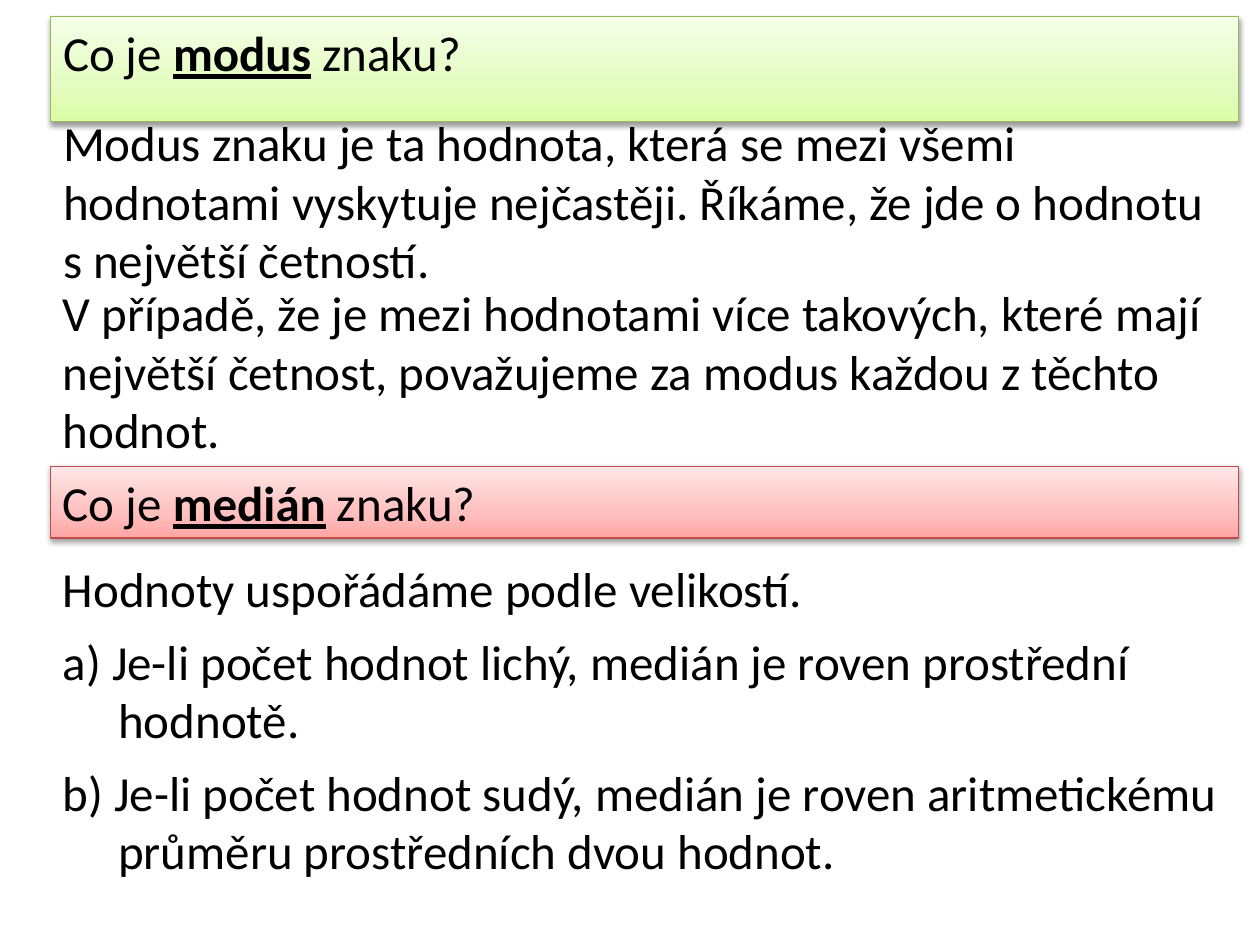
from pptx import Presentation
from pptx.dml.color import RGBColor
from pptx.enum.shapes import MSO_SHAPE
from pptx.enum.text import MSO_ANCHOR, MSO_AUTO_SIZE, PP_ALIGN
from pptx.oxml import parse_xml
from pptx.oxml.ns import nsdecls, qn
from pptx.util import Inches, Pt

COLORS = {
    "text": "000000",
    "green_line": "98B955",
    "green": ["DAFDA7", "E4FCC2", "F5FFE7"],
    "red_line": "BF4C48",
    "red": ["FFA6A5", "FFC0BF", "FFE7E7"],
    "shadow": "000000",
}
GRADIENT_POSITIONS = [0, 35, 100]


class SlideBuilder:
    font, size = "Calibri", Pt(28)
    left, width = Inches(0.4), Inches(9.43)
    hanging = Inches(0.44)

    def __init__(self, slide):
        self.slide = slide

    def place(self, shape, top, height):
        shape.left, shape.top = self.left, Inches(top)
        shape.width, shape.height = self.width, Inches(height)

    def fill_text(self, shape, lines, hanging=0):
        """Each line is a list of (text, emphasised) runs."""
        frame = shape.text_frame
        frame.word_wrap = True
        frame.auto_size = MSO_AUTO_SIZE.SHAPE_TO_FIT_TEXT
        frame.vertical_anchor = MSO_ANCHOR.TOP
        frame.margin_left = frame.margin_right = Inches(0.1)
        frame.margin_top = frame.margin_bottom = Inches(0.05)
        for index, runs in enumerate(lines):
            paragraph = frame.add_paragraph() if index else frame.paragraphs[0]
            properties = paragraph._p.get_or_add_pPr()
            properties.set("marL", str(hanging if index else 0))
            properties.set("indent", "0")
            properties.append(parse_xml(f"<a:buNone {nsdecls('a')}/>"))
            paragraph.alignment = PP_ALIGN.LEFT
            paragraph.space_before = Pt(0)
            for text, emphasised in runs:
                run = paragraph.add_run()
                run.text = text
                run.font.name, run.font.size = self.font, self.size
                run.font.color.rgb = RGBColor.from_string(COLORS["text"])
                run.font.bold = run.font.underline = emphasised

    def banner(self, top, term, color, shape=None):
        if shape is None:
            shape = self.slide.shapes.add_shape(
                MSO_SHAPE.RECTANGLE, self.left, 0, self.width, 0)
        self.place(shape, top, 0.57)
        # Three-stop gradient, darkest at the bottom
        shape.fill.gradient()
        shape.fill.gradient_angle = 90
        stops = shape._element.spPr.find(f".//{qn('a:gsLst')}")
        for stop in list(stops):
            stops.remove(stop)
        for position, value in zip(GRADIENT_POSITIONS, COLORS[color]):
            stops.append(parse_xml(
                f'<a:gs {nsdecls("a")} pos="{position * 1000}">'
                f'<a:srgbClr val="{value}"/></a:gs>'))
        shape.line.color.rgb = RGBColor.from_string(COLORS[f"{color}_line"])
        shape.line.width = Pt(0.75)
        # Soft shadow below
        shape.shadow.inherit = False
        shape._element.spPr.find(qn("a:effectLst")).append(parse_xml(
            f'<a:outerShdw {nsdecls("a")} blurRad="{Pt(3.1)}" dist="{Pt(1.6)}" '
            f'dir="5400000" rotWithShape="0"><a:srgbClr val="{COLORS["shadow"]}">'
            '<a:alpha val="38000"/></a:srgbClr></a:outerShdw>'))
        self.fill_text(shape, [[("Co je ", False), (term, True), (" znaku?", False)]])

    def text(self, top, height, lines, hanging=0, shape=None):
        if shape is None:
            shape = self.slide.shapes.add_textbox(self.left, 0, self.width, 0)
        self.place(shape, top, height)
        self.fill_text(shape, [[(line, False)] for line in lines], hanging)


def main():
    presentation = Presentation()
    presentation.slide_width, presentation.slide_height = Inches(10), Inches(7.5)
    slide = presentation.slides.add_slide(presentation.slide_layouts[1])
    builder = SlideBuilder(slide)

    # Mode
    builder.banner(0.13, "modus", "green", slide.shapes.title)
    builder.text(0.84, 1.51, [
        "Modus znaku je ta hodnota, která se mezi všemi",
        "hodnotami vyskytuje nejčastěji. Říkáme, že jde o hodnotu",
        "s největší četností.",
    ], shape=slide.placeholders[1])
    builder.text(2.19, 1.51, [
        "V případě, že je mezi hodnotami více takových, které mají",
        "největší četnost, považujeme za modus každou z těchto",
        "hodnot.",
    ])

    # Median
    builder.banner(3.7, "medián", "red")
    builder.text(4.38, 0.57, ["Hodnoty uspořádáme podle velikostí."])
    builder.text(4.96, 1.04, [
        "a) Je-li počet hodnot lichý, medián je roven prostřední",
        "hodnotě.",
    ], builder.hanging)
    builder.text(6, 1.04, [
        "b) Je-li počet hodnot sudý, medián je roven aritmetickému",
        "průměru prostředních dvou hodnot.",
    ], builder.hanging)

    presentation.save("out.pptx")


if __name__ == "__main__":
    main()
